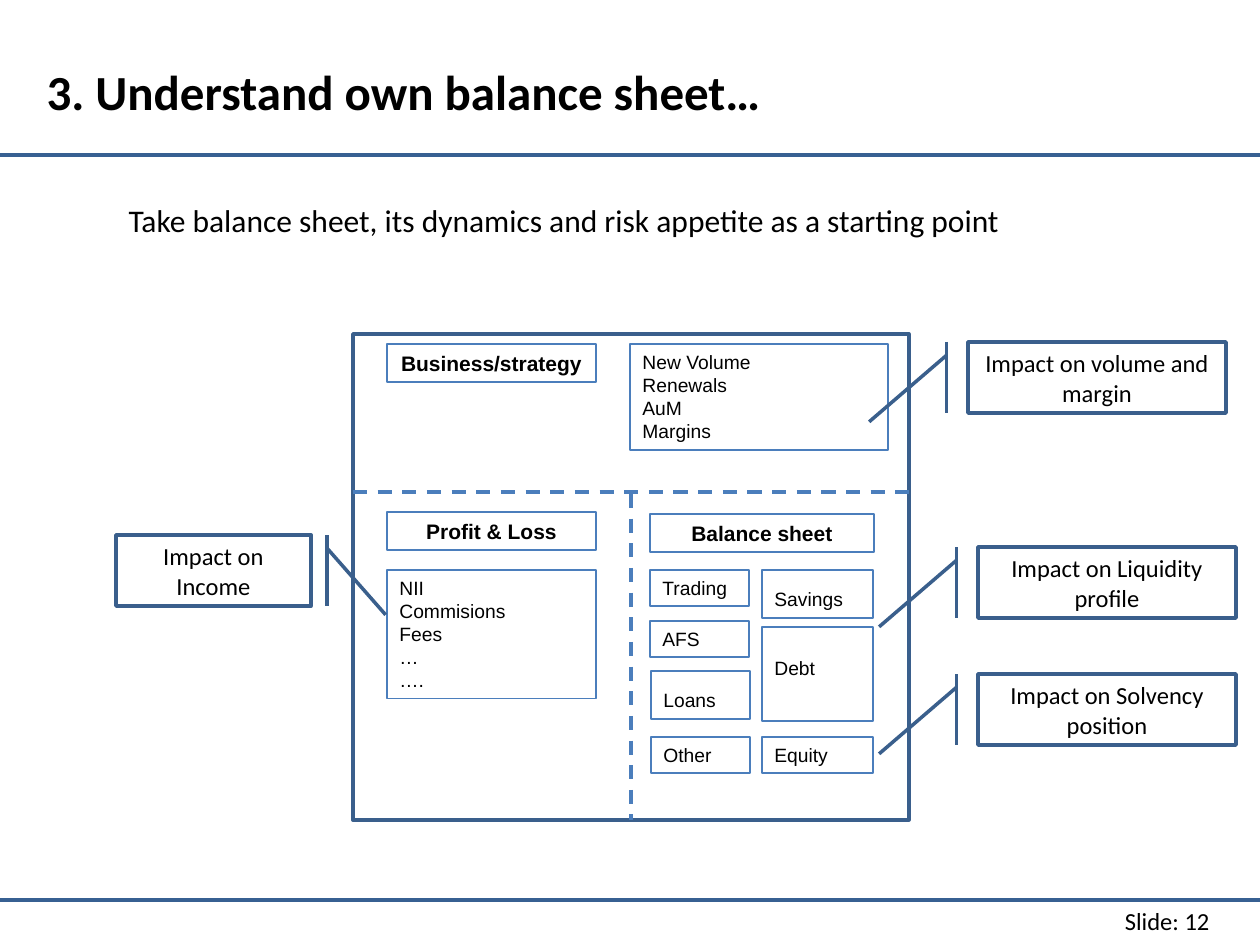
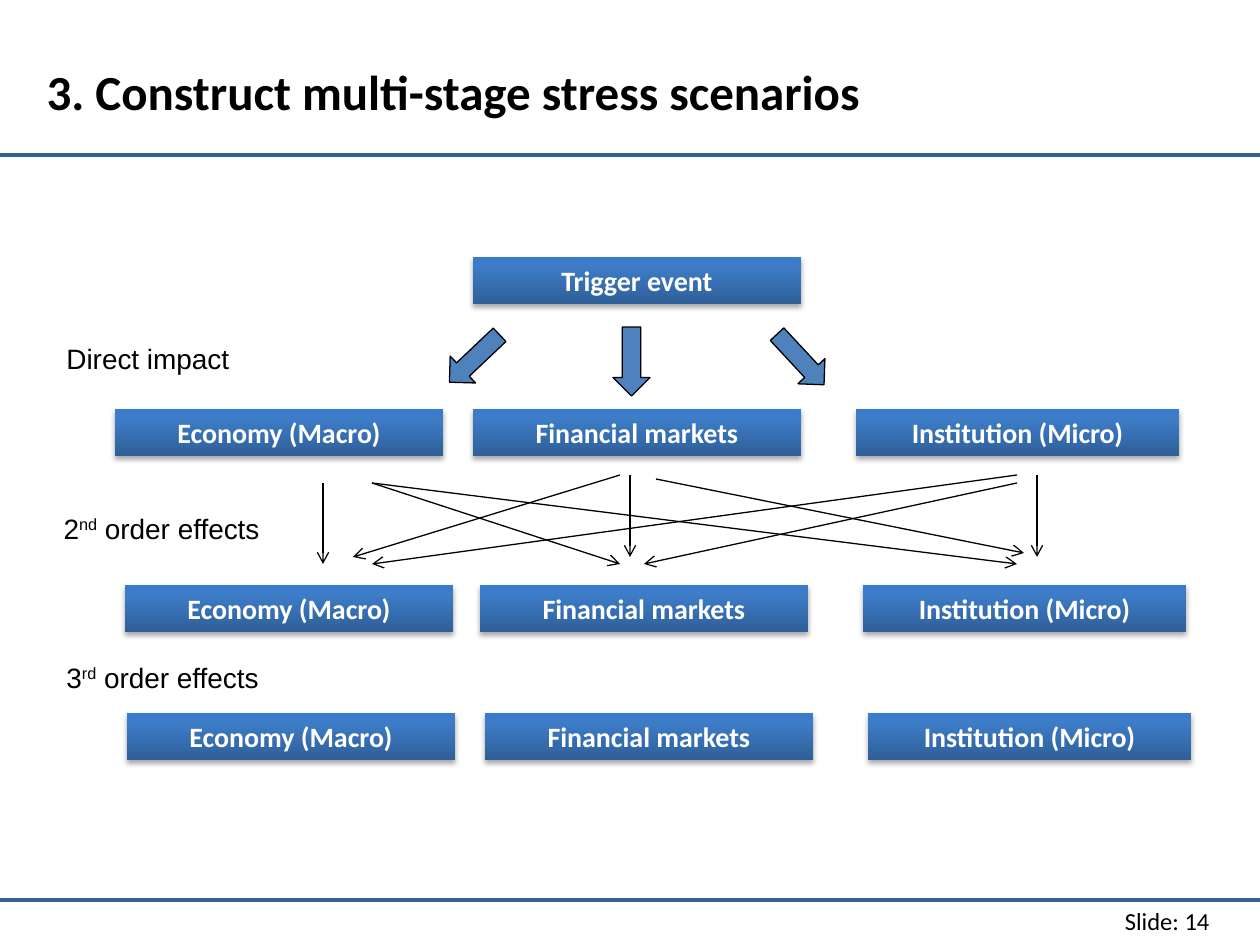
from copy import deepcopy
from dataclasses import dataclass, field
from typing import NamedTuple

from lxml.etree import SubElement
from pptx import Presentation
from pptx.dml.color import RGBColor
from pptx.enum.dml import MSO_LINE
from pptx.enum.shapes import MSO_CONNECTOR, MSO_SHAPE
from pptx.enum.text import MSO_ANCHOR, MSO_AUTO_SIZE, PP_ALIGN
from pptx.oxml.ns import qn
from pptx.shapes.autoshape import Shape
from pptx.shapes.connector import Connector
from pptx.slide import Slide
from pptx.util import Emu, Pt

PX_PER_INCH = 126
SLIDE_WIDTH, SLIDE_HEIGHT = 1260, 945


def px(length: int) -> Emu:
    return Emu(round(length * 914400 / PX_PER_INCH))


@dataclass(frozen=True)
class TextStyle:
    font: str
    size: int
    color: str = "000000"
    bold: bool = False
    align: PP_ALIGN = PP_ALIGN.LEFT
    anchor: MSO_ANCHOR = MSO_ANCHOR.TOP
    fit: MSO_AUTO_SIZE = MSO_AUTO_SIZE.SHAPE_TO_FIT_TEXT
    wrap: bool = True


@dataclass(frozen=True)
class Theme:
    band: str = "376092"
    frame: str = "3A5F8C"
    label: str = "4B7EBC"
    arrow: str = "4F81BD"
    ink: str = "000000"
    gradient: tuple = ((0, "2F5F99"), (0.8, "3D7CC7"), (1, "3A7CCB"))
    thick: float = 2
    thin: float = 0.75
    title: TextStyle = TextStyle("Calibri", 28, bold=True, anchor=MSO_ANCHOR.MIDDLE,
                                 fit=MSO_AUTO_SIZE.NONE)
    body: TextStyle = TextStyle("Calibri", 18, fit=MSO_AUTO_SIZE.NONE)
    footer: TextStyle = TextStyle("Calibri", 14, align=PP_ALIGN.RIGHT, wrap=False)
    heading: TextStyle = TextStyle("Arial", 12, bold=True, align=PP_ALIGN.CENTER)
    item: TextStyle = TextStyle("Arial", 11)
    callout: TextStyle = TextStyle("Calibri", 14, align=PP_ALIGN.CENTER,
                                   anchor=MSO_ANCHOR.MIDDLE, fit=MSO_AUTO_SIZE.NONE)
    stage: TextStyle = TextStyle("Calibri", 16, "FFFFFF", True, PP_ALIGN.CENTER)
    effect: TextStyle = TextStyle("Arial", 16)
    effect_right: TextStyle = TextStyle("Arial", 16, align=PP_ALIGN.RIGHT)


THEME = Theme()


class Box(NamedTuple):
    left: int
    top: int
    width: int
    height: int


@dataclass(frozen=True)
class Label:
    box: Box
    text: str
    style: TextStyle = field(default=THEME.item)
    spacing: float = 1


class Callout(NamedTuple):
    box: Box
    text: str
    flipped: bool = False


class Arrow(NamedTuple):
    start: tuple[int, int]
    end: tuple[int, int]


class BlockArrow(NamedTuple):
    left: int
    top: int
    rotation: float


class StageRow(NamedTuple):
    top: int
    lefts: tuple[int, int, int]


# Balance sheet content
FRAME = Box(353, 334, 556, 486)
DIVIDER_TOP = 492
LABELS = [
    Label(Box(387, 344, 209, 38), "Business/strategy", THEME.heading),
    Label(Box(630, 344, 258, 106), "New Volume\nRenewals\nAuM\nMargins"),
    Label(Box(387, 512, 209, 38), "Profit & Loss", THEME.heading),
    Label(Box(387, 570, 209, 129), "NII\nCommisions\nFees\n…\n…."),
    Label(Box(650, 514, 224, 38), "Balance sheet", THEME.heading),
    Label(Box(650, 570, 99, 36), "Trading"),
    Label(Box(650, 621, 99, 36), "AFS"),
    Label(Box(651, 671, 99, 48), "Loans", spacing=1.5),
    Label(Box(651, 737, 99, 36), "Other"),
    Label(Box(762, 570, 111, 48), "Savings", spacing=1.5),
    Label(Box(762, 627, 111, 94), "Debt", spacing=2),
    Label(Box(762, 737, 111, 36), "Equity"),
]
CALLOUTS = [
    Callout(Box(968, 342, 258, 71), "Impact on volume and margin"),
    Callout(Box(978, 547, 258, 71), "Impact on Liquidity profile"),
    Callout(Box(978, 674, 258, 71), "Impact on Solvency position"),
    Callout(Box(116, 535, 195, 71), "Impact on Income", True),
]

# Stress scenario content
STAGES = [("Economy (Macro)", 328), ("Financial markets", 328), ("Institution (Micro)", 323)]
STAGE_HEIGHT = 47
TRIGGER = Box(473, 257, 328, STAGE_HEIGHT)
STAGE_ROWS = [
    StageRow(409, (115, 473, 856)),
    StageRow(585, (125, 480, 863)),
    StageRow(713, (127, 485, 868)),
]
# Text between carets is raised
EFFECTS = [
    Label(Box(54, 335, 357, 47), "Direct impact", THEME.effect),
    Label(Box(-35, 505, 307, 47), "2^nd^ order effects", THEME.effect_right),
    Label(Box(54, 654, 318, 47), "3^rd^ order effects", THEME.effect),
]
BLOCK_ARROWS = [BlockArrow(440, 340, 136.6), BlockArrow(597, 343, 90), BlockArrow(766, 341, 47.1)]
ARROWS = [
    Arrow((323, 483), (323, 564)),
    Arrow((372, 483), (620, 564)),
    Arrow((372, 483), (1017, 564)),
    Arrow((630, 475), (630, 557)),
    Arrow((1037, 475), (1037, 557)),
    Arrow((1017, 483), (644, 564)),
    Arrow((1017, 475), (372, 564)),
    Arrow((656, 479), (1024, 553)),
    Arrow((620, 475), (353, 557)),
]


def write(shape: Shape, text: str, style: TextStyle, spacing: float = 1) -> None:
    frame = shape.text_frame
    frame_format = {"word_wrap": style.wrap, "auto_size": style.fit,
                    "vertical_anchor": style.anchor}
    for name, value in frame_format.items():
        setattr(frame, name, value)
    font_format = {"name": style.font, "size": Pt(style.size), "bold": style.bold}
    for index, line in enumerate(text.split("\n")):
        paragraph = frame.add_paragraph() if index else frame.paragraphs[0]
        paragraph_format = {"alignment": style.align, "line_spacing": spacing,
                            "space_before": Pt(0)}
        for name, value in paragraph_format.items():
            setattr(paragraph, name, value)
        for piece, words in enumerate(line.split("^")):
            run = paragraph.add_run()
            run.text = words
            for name, value in font_format.items():
                setattr(run.font, name, value)
            run.font.color.rgb = RGBColor.from_string(style.color)
            if piece % 2:
                run.font._element.set("baseline", "30000")


def place(shape: Shape, box: Box) -> None:
    for name, value in box._asdict().items():
        setattr(shape, name, px(value))


def add_outline(slide: Slide, kind: MSO_SHAPE, box: Box, color: str, width: float) -> Shape:
    shape = slide.shapes.add_shape(kind, *map(px, box))
    shape.shadow.inherit = False
    shape.fill.background()
    shape.line.color.rgb = RGBColor.from_string(color)
    shape.line.width = Pt(width)
    return shape


def add_line(slide: Slide, start: tuple[int, int], end: tuple[int, int],
             color: str, width: float) -> Connector:
    line = slide.shapes.add_connector(MSO_CONNECTOR.STRAIGHT, *map(px, (*start, *end)))
    line.line.color.rgb = RGBColor.from_string(color)
    line.line.width = Pt(width)
    SubElement(line._element.spPr, qn("a:effectLst"))
    return line


def add_text(slide: Slide, label: Label) -> None:
    write(slide.shapes.add_textbox(*map(px, label.box)), label.text, label.style)


def add_stage(slide: Slide, box: Box, text: str) -> None:
    shape = slide.shapes.add_shape(MSO_SHAPE.RECTANGLE, *map(px, box))
    shape.line.fill.background()
    # Three-stop gradient running upwards
    shape.fill.gradient()
    shape.fill.gradient_angle = 90
    stop_list = shape._element.spPr.find(f".//{qn('a:gsLst')}")
    stop_list.append(deepcopy(stop_list[-1]))
    for stop, (position, color) in zip(shape.fill.gradient_stops, THEME.gradient):
        stop.position = position
        stop.color.rgb = RGBColor.from_string(color)
    # Soft shadow below
    shape.shadow.inherit = False
    effects = shape._element.spPr.find(qn("a:effectLst"))
    shadow = SubElement(effects, qn("a:outerShdw"), blurRad="40000", dist="23000",
                        dir="5400000", rotWithShape="0")
    color = SubElement(shadow, qn("a:srgbClr"), val=THEME.ink)
    SubElement(color, qn("a:alpha"), val="35000")
    write(shape, text, THEME.stage)


def add_base(presentation: Presentation, layout: int, title: str, number: int) -> Slide:
    slide = presentation.slides.add_slide(presentation.slide_layouts[layout])
    for top in (900, 155):
        add_line(slide, (0, top), (SLIDE_WIDTH, top), THEME.band, THEME.thick)
    add_text(slide, Label(Box(1108, 900, 114, 43), f"Slide: {number}", THEME.footer))
    place(slide.shapes.title, Box(34, 26, 1091, 129))
    write(slide.shapes.title, title, THEME.title)
    return slide


def build_balance_sheet(presentation: Presentation) -> None:
    slide = add_base(presentation, 1, "3. Understand own balance sheet…", 12)
    # Lead sentence without bullet
    body = slide.placeholders[1]
    place(body, Box(116, 195, 1110, 59))
    properties = body.text_frame.paragraphs[0]._p.get_or_add_pPr()
    properties.set("marL", "0")
    properties.set("indent", "0")
    SubElement(properties, qn("a:buNone"))
    write(body, "Take balance sheet, its dynamics and risk appetite as a starting point",
          THEME.body)
    # Frame with dashed dividers
    frame = add_outline(slide, MSO_SHAPE.RECTANGLE, FRAME, THEME.frame, THEME.thick)
    right, bottom = FRAME.left + FRAME.width, FRAME.top + FRAME.height
    middle = FRAME.left + FRAME.width // 2
    across = add_line(slide, (FRAME.left, DIVIDER_TOP), (right, DIVIDER_TOP),
                      THEME.label, THEME.thick)
    down = add_line(slide, (middle, DIVIDER_TOP + 2), (middle, bottom),
                    THEME.label, THEME.thick)
    down.end_connect(frame, 2)
    for divider in (across, down):
        divider.line.dash_style = MSO_LINE.DASH
    # Labels and callouts
    for label in LABELS:
        shape = add_outline(slide, MSO_SHAPE.RECTANGLE, label.box, THEME.label, THEME.thin)
        write(shape, label.text, label.style, label.spacing)
    for callout in CALLOUTS:
        shape = add_outline(slide, MSO_SHAPE.LINE_CALLOUT_1_BORDER_AND_ACCENT_BAR,
                            callout.box, THEME.frame, THEME.thick)
        if callout.flipped:
            shape._element.spPr.find(qn("a:xfrm")).set("flipH", "1")
        write(shape, callout.text, THEME.callout)


def build_scenarios(presentation: Presentation) -> None:
    slide = add_base(presentation, 5, "3. Construct multi-stage stress scenarios", 14)
    # Trigger and the three rows of stages
    add_stage(slide, TRIGGER, "Trigger event")
    for row in STAGE_ROWS:
        for left, (text, width) in zip(row.lefts, STAGES):
            add_stage(slide, Box(left, row.top, width, STAGE_HEIGHT), text)
    for label in EFFECTS:
        add_text(slide, label)
    # Direct impact arrows
    for arrow in BLOCK_ARROWS:
        shape = add_outline(slide, MSO_SHAPE.RIGHT_ARROW, Box(arrow.left, arrow.top, 69, 37),
                            THEME.ink, THEME.thin)
        shape.fill.solid()
        shape.fill.fore_color.rgb = RGBColor.from_string(THEME.arrow)
        shape.rotation = arrow.rotation
    # Second order arrows
    for arrow in ARROWS:
        line = add_line(slide, arrow.start, arrow.end, THEME.ink, THEME.thin)
        SubElement(line.line._get_or_add_ln(), qn("a:tailEnd"), type="arrow")


def main() -> None:
    presentation = Presentation()
    presentation.slide_width, presentation.slide_height = px(SLIDE_WIDTH), px(SLIDE_HEIGHT)
    build_balance_sheet(presentation)
    build_scenarios(presentation)
    presentation.save("out.pptx")


if __name__ == "__main__":
    main()
